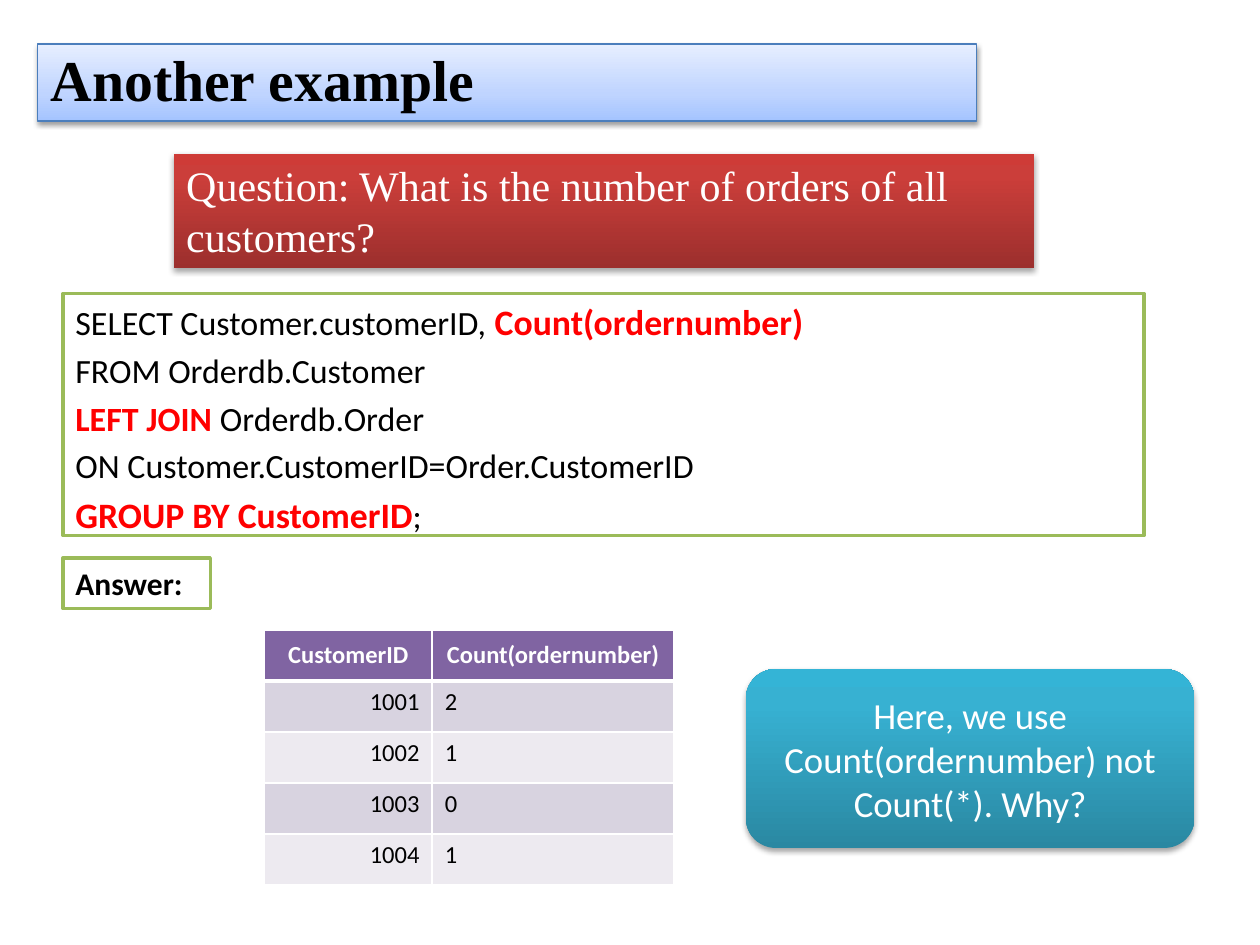
from copy import deepcopy

from lxml import etree
from pptx import Presentation
from pptx.dml.color import RGBColor
from pptx.enum.shapes import MSO_SHAPE
from pptx.enum.text import MSO_ANCHOR, PP_ALIGN
from pptx.oxml.ns import qn
from pptx.util import Inches, Pt

RECTANGLE, ROUNDED = MSO_SHAPE.RECTANGLE, MSO_SHAPE.ROUNDED_RECTANGLE
TOP, MIDDLE = MSO_ANCHOR.TOP, MSO_ANCHOR.MIDDLE
LEFT, CENTER, RIGHT = PP_ALIGN.LEFT, PP_ALIGN.CENTER, PP_ALIGN.RIGHT

THEME = {
    "white": "FFFFFF",
    "green": "9BBB59",
    "title_line": "4B7EBC",
    "header": "8064A2",
    "bands": ("D8D3E0", "EDEAF0"),
    "blue": ((0, "A4C4FF"), (0.35, "BFD4FF"), (1, "E6EEFF")),
    "red": ((0, "9C2F2D"), (0.8, "CB3E3A"), (1, "CE3B37")),
    "teal": ((0, "2A88A2"), (0.8, "37B1D2"), (1, "34B4D6")),
    "title": {"name": "Times New Roman", "size": 33, "bold": True, "color": "000000"},
    "question": {"name": "Times New Roman", "size": 24, "bold": False, "color": "FFFFFF"},
    "code": {"name": "Calibri", "size": 19.4, "bold": False, "color": "000000"},
    "keyword": {"name": "Calibri", "size": 20.4, "bold": True, "color": "FF0000"},
    "join": {"name": "Calibri", "size": 19.4, "bold": True, "color": "FF0000"},
    "answer": {"name": "Calibri", "size": 18, "bold": True, "color": "000000"},
    "note": {"name": "Calibri", "size": 21, "bold": False, "color": "FFFFFF"},
    "table_header": {"name": "Calibri", "size": 14, "bold": True, "color": "FFFFFF"},
    "table_body": {"name": "Calibri", "size": 14, "bold": False, "color": "000000"},
}

TITLE = [[("Another example", "title")]]
QUESTION = [[("Question: What is the number of orders of all customers?", "question")]]
QUERY = [
    [("SELECT Customer.customerID, ", "code"), ("Count(ordernumber)", "keyword")],
    [("FROM Orderdb.Customer", "code")],
    [("LEFT JOIN ", "join"), ("Orderdb.Order", "code")],
    [("ON Customer.CustomerID=Order.CustomerID", "code")],
    [("GROUP BY CustomerID", "keyword"), (";", "code")],
]
ANSWER = [[("Answer:", "answer")]]
NOTE = [[("Here, we use Count(ordernumber) not Count(*). Why?", "note")]]
ORDER_COUNTS = [
    ("CustomerID", "Count(ordernumber)"),
    ("1001", "2"),
    ("1002", "1"),
    ("1003", "0"),
    ("1004", "1"),
]
COLUMN_WIDTHS = (1.33, 1.92)
ROW_HEIGHT = 0.405


def color(value):
    return RGBColor.from_string(value)


def write(text_frame, paragraphs, alignment=LEFT, **spacing):
    for index, runs in enumerate(paragraphs):
        paragraph = text_frame.paragraphs[0] if index == 0 else text_frame.add_paragraph()
        for name, value in {"alignment": alignment, **spacing}.items():
            setattr(paragraph, name, value)
        for text, style in runs:
            run = paragraph.add_run()
            run.text = text
            values = dict(THEME[style])
            run.font.color.rgb = color(values.pop("color"))
            values["size"] = Pt(values["size"])
            for name, value in values.items():
                setattr(run.font, name, value)


def fill_gradient(shape, stops):
    shape.fill.gradient()
    shape.fill.gradient_angle = 90
    stop_list = shape._element.spPr.find(".//" + qn("a:gsLst"))
    stop_list.append(deepcopy(stop_list[0]))
    for stop, (position, value) in zip(shape.fill.gradient_stops, stops):
        stop.position = position
        stop.color.rgb = color(value)


def add_shadow(shape, opacity, distance):
    effects = shape._element.spPr.find(qn("a:effectLst"))
    shadow = etree.SubElement(effects, qn("a:outerShdw"), blurRad=str(Pt(3.1)),
                              dist=str(Pt(distance)), dir="5400000", rotWithShape="0")
    black = etree.SubElement(shadow, qn("a:srgbClr"), val="000000")
    etree.SubElement(black, qn("a:alpha"), val=str(opacity * 1000))


def format_box(shape, box, fill, line=None, anchor=TOP, shadow=None):
    for name, value in zip(("left", "top", "width", "height"), box):
        setattr(shape, name, Inches(value))
    shape.shadow.inherit = False
    if isinstance(fill, str):
        shape.fill.solid()
        shape.fill.fore_color.rgb = color(fill)
    else:
        fill_gradient(shape, fill)
    if line:
        shape.line.color.rgb = color(line[0])
        shape.line.width = Pt(line[1])
    else:
        shape.line.fill.background()
    if shadow:
        add_shadow(shape, *shadow)
    shape.text_frame.word_wrap = True
    shape.text_frame.vertical_anchor = anchor
    return shape.text_frame


def add_box(slide, kind, box, **formats):
    shape = slide.shapes.add_shape(kind, *(Inches(value) for value in box))
    return format_box(shape, box, **formats)


def set_borders(cell, bottom_width):
    properties = cell._tc.get_or_add_tcPr()
    for index, (side, width) in enumerate((("L", 1), ("R", 1), ("T", 1), ("B", bottom_width))):
        border = etree.Element(qn("a:ln" + side), w=str(Pt(width)))
        solid = etree.SubElement(border, qn("a:solidFill"))
        etree.SubElement(solid, qn("a:srgbClr"), val=THEME["white"])
        properties.insert(index, border)


def add_order_table(slide, left, top):
    table = slide.shapes.add_table(
        len(ORDER_COUNTS), len(COLUMN_WIDTHS), Inches(left), Inches(top),
        Inches(sum(COLUMN_WIDTHS)), Inches(ROW_HEIGHT * len(ORDER_COUNTS))).table
    for column, width in zip(table.columns, COLUMN_WIDTHS):
        column.width = Inches(width)
    for row_index, row in enumerate(ORDER_COUNTS):
        header = row_index == 0
        fill = THEME["header"] if header else THEME["bands"][(row_index - 1) % 2]
        for column_index, text in enumerate(row):
            cell = table.cell(row_index, column_index)
            cell.fill.solid()
            cell.fill.fore_color.rgb = color(fill)
            cell.vertical_anchor = MIDDLE if header else TOP
            set_borders(cell, 3 if header else 1)
            alignment = CENTER if header else (RIGHT, LEFT)[column_index]
            style = "table_header" if header else "table_body"
            write(cell.text_frame, [[(text, style)]], alignment)


def main():
    presentation = Presentation()
    presentation.slide_width, presentation.slide_height = Inches(10), Inches(7.5)
    slide = presentation.slides.add_slide(presentation.slide_layouts[5])
    green_line = (THEME["green"], 2)

    title = format_box(slide.shapes.title, (0.3, 0.35, 7.45, 0.61), THEME["blue"],
                       line=(THEME["title_line"], 0.75), anchor=MIDDLE, shadow=(38, 1.6))
    write(title, TITLE, line_spacing=0.9)

    query = add_box(slide, RECTANGLE, (0.5, 2.33, 8.58, 1.92),
                    fill=THEME["white"], line=green_line)
    write(query, QUERY, space_before=Pt(4))

    question = add_box(slide, RECTANGLE, (1.38, 1.22, 6.83, 0.91),
                       fill=THEME["red"], shadow=(35, 1.8))
    write(question, QUESTION)

    add_order_table(slide, 2.1, 5)

    note = add_box(slide, ROUNDED, (5.92, 5.31, 3.56, 1.42),
                   fill=THEME["teal"], anchor=MIDDLE, shadow=(35, 1.8))
    write(note, NOTE, CENTER)

    answer = add_box(slide, RECTANGLE, (0.5, 4.43, 1.17, 0.4),
                     fill=THEME["white"], line=green_line)
    write(answer, ANSWER)

    presentation.save("out.pptx")


if __name__ == "__main__":
    main()
